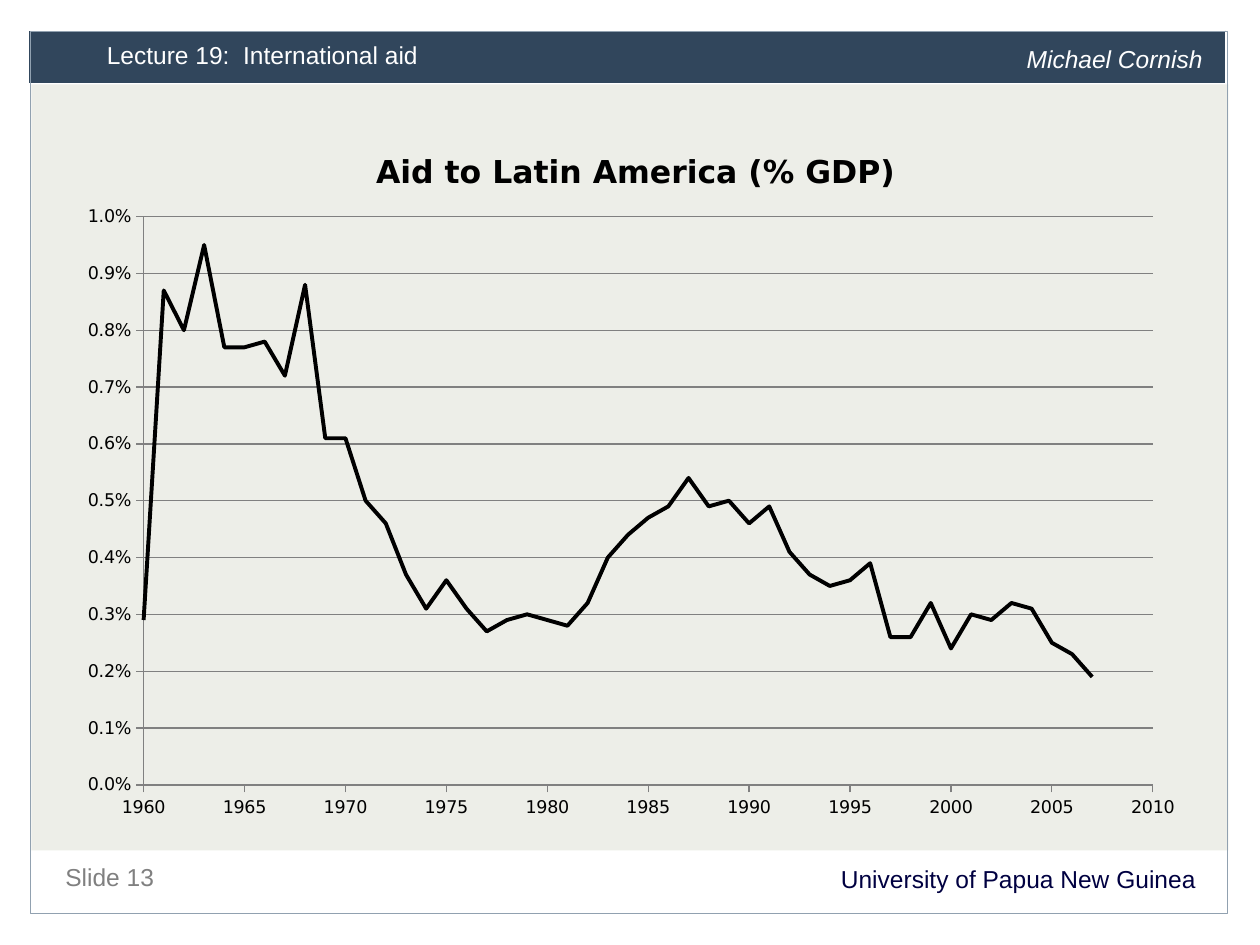
from dataclasses import dataclass

from lxml.etree import SubElement
from pptx import Presentation
from pptx.chart.data import XyChartData
from pptx.dml.color import RGBColor
from pptx.enum.chart import XL_CHART_TYPE as ChartType, XL_TICK_MARK as TickMark
from pptx.enum.shapes import MSO_SHAPE as Preset
from pptx.enum.text import PP_ALIGN as Align
from pptx.oxml.ns import qn
from pptx.util import Inches, Pt


@dataclass(frozen=True)
class Theme:
    panel: str = "EDEEE8"
    banner: str = "31465C"
    frame: str = "91A1B0"
    white: str = "FFFFFF"
    navy: str = "000041"
    gray: str = "808080"
    black: str = "000000"
    text_font: str = "Arial"
    chart_font: str = "DejaVu Sans"
    text_size: int = 14
    title_size: int = 18
    label_size: int = 10


THEME = Theme()
WIDTH, HEIGHT = 10, 7.5
MARGIN, BANNER_TOP, BAND_WIDTH = 0.23, 0.24, 9.5

BANDS = [
    ((0.25, 0.67, BAND_WIDTH, 6.08), THEME.panel, None, 0),
    ((MARGIN, BANNER_TOP, BAND_WIDTH, 0.42), THEME.banner, THEME.white, 0.5),
    ((0.24, 0.25, BAND_WIDTH, 7), None, THEME.frame, 0.75),
]
LABELS = [
    ("University of Papua New Guinea", (0.42, 6.83, 9.17, 0.32),
     dict(color=THEME.navy, spacing=15, align=Align.RIGHT)),
    ("Slide 13", (0.42, 6.75, 4.33, 0.34), dict(color=THEME.gray, spacing=20)),
    ("Lecture 19:  International aid", (0.75, 0.25, 6.13, 0.37), dict(color=THEME.white)),
    ("Michael Cornish", (8.05, 0.28, 1.64, 0.37), dict(color=THEME.white, italic=True)),
]
CHART_TITLE = "Aid to Latin America (% GDP)"
CHART_BOX = (0.51, 0.92, 9, 5.71)
PLOT_SHARES = dict(x=0.07, y=0.14, w=0.89, h=0.79)
TITLE_SHARES = dict(x=0.27, y=0.04)
FIRST_YEAR, LAST_YEAR = 1960, 2010
AID_SHARES = [
    0.0029, 0.0087, 0.008, 0.0095, 0.0077, 0.0077, 0.0078, 0.0072, 0.0088, 0.0061,
    0.0061, 0.005, 0.0046, 0.0037, 0.0031, 0.0036, 0.0031, 0.0027, 0.0029, 0.003,
    0.0029, 0.0028, 0.0032, 0.004, 0.0044, 0.0047, 0.0049, 0.0054, 0.0049, 0.005,
    0.0046, 0.0049, 0.0041, 0.0037, 0.0035, 0.0036, 0.0039, 0.0026, 0.0026, 0.0032,
    0.0024, 0.003, 0.0029, 0.0032, 0.0031, 0.0025, 0.0023, 0.0019,
]


def place(box):
    return [Inches(length) for length in box]


def color_line(line, color, width):
    line.color.rgb = RGBColor.from_string(color)
    line.width = Pt(width)


def format_font(font, name, size, color, bold=False, italic=False):
    font.name, font.size = name, Pt(size)
    font.bold, font.italic = bold, italic
    font.color.rgb = RGBColor.from_string(color)


def add_band(slide, box, fill, line, width):
    shape = slide.shapes.add_shape(Preset.RECTANGLE, *place(box))
    shape.shadow.inherit = False
    if fill:
        shape.fill.solid()
        shape.fill.fore_color.rgb = RGBColor.from_string(fill)
    else:
        shape.fill.background()
    if line:
        color_line(shape.line, line, width)
    else:
        shape.line.fill.background()


def add_text(slide, text, box, color, spacing=18, align=Align.LEFT, italic=False):
    frame = slide.shapes.add_textbox(*place(box)).text_frame
    frame.word_wrap = True
    paragraph = frame.paragraphs[0]
    paragraph.text = text
    paragraph.alignment = align
    paragraph.line_spacing = Pt(spacing)
    format_font(paragraph.runs[0].font, THEME.text_font, THEME.text_size, color, italic=italic)


def set_layout(element, shares, inner=False):
    layout = element.find(qn("c:layout"))
    if layout is None:
        layout = SubElement(element, qn("c:layout"))
        text = element.find(qn("c:tx"))
        if text is None:
            element.insert(0, layout)
        else:
            text.addnext(layout)
    manual = SubElement(layout, qn("c:manualLayout"))
    settings = [("layoutTarget", "inner")] if inner else []
    settings += [(f"{key}Mode", "edge") for key in ("x", "y")]
    settings += list(shares.items())
    for tag, value in settings:
        SubElement(manual, qn(f"c:{tag}")).set("val", str(value))


def format_axis(axis, minimum, maximum, step, number_format):
    axis.minimum_scale, axis.maximum_scale = minimum, maximum
    axis.major_unit = step
    axis.major_tick_mark, axis.minor_tick_mark = TickMark.OUTSIDE, TickMark.NONE
    axis.tick_labels.number_format = number_format
    axis.tick_labels.number_format_is_linked = False
    format_font(axis.tick_labels.font, THEME.chart_font, THEME.label_size, THEME.black)
    color_line(axis.format.line, THEME.gray, 0.75)


def add_aid_chart(slide):
    data = XyChartData()
    points = data.add_series("Series 1")
    for year, share in enumerate(AID_SHARES, FIRST_YEAR):
        points.add_data_point(year, share)
    chart = slide.shapes.add_chart(
        ChartType.XY_SCATTER_SMOOTH_NO_MARKERS, *place(CHART_BOX), data).chart
    format_font(chart.font, THEME.chart_font, THEME.label_size, THEME.black)
    chart.has_legend = False
    chart.has_title = True
    paragraph = chart.chart_title.text_frame.paragraphs[0]
    paragraph.text = CHART_TITLE
    format_font(paragraph.runs[0].font, THEME.chart_font, THEME.title_size, THEME.black, bold=True)

    plot = chart.plots[0]
    plot.vary_by_categories = False
    series = plot.series[0]
    series.smooth = True
    color_line(series.format.line, THEME.black, 2.25)

    format_axis(chart.category_axis, FIRST_YEAR, LAST_YEAR, 5, "0")
    format_axis(chart.value_axis, 0, 0.01, 0.001, "0.0%")
    chart.category_axis.has_major_gridlines = False
    chart.value_axis.has_major_gridlines = True
    color_line(chart.value_axis.major_gridlines.format.line, THEME.gray, 0.75)

    body = chart.element.find(qn("c:chart"))
    set_layout(body.find(qn("c:title")), TITLE_SHARES)
    set_layout(body.find(qn("c:plotArea")), PLOT_SHARES, inner=True)


def main():
    presentation = Presentation()
    presentation.slide_width, presentation.slide_height = Inches(WIDTH), Inches(HEIGHT)
    slide = presentation.slides.add_slide(presentation.slide_layouts[6])
    for band in BANDS:
        add_band(slide, *band)
    for text, box, style in LABELS:
        add_text(slide, text, box, **style)
    add_aid_chart(slide)
    presentation.save("out.pptx")


if __name__ == "__main__":
    main()
